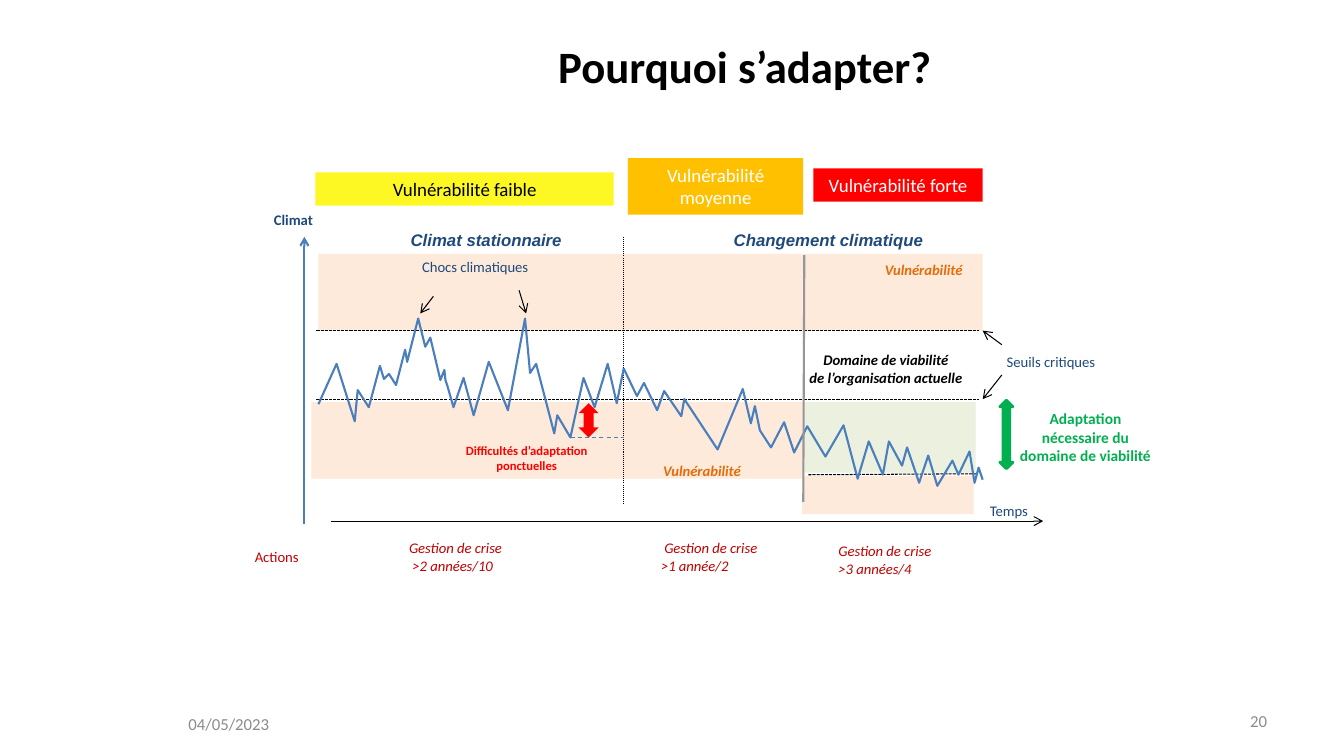
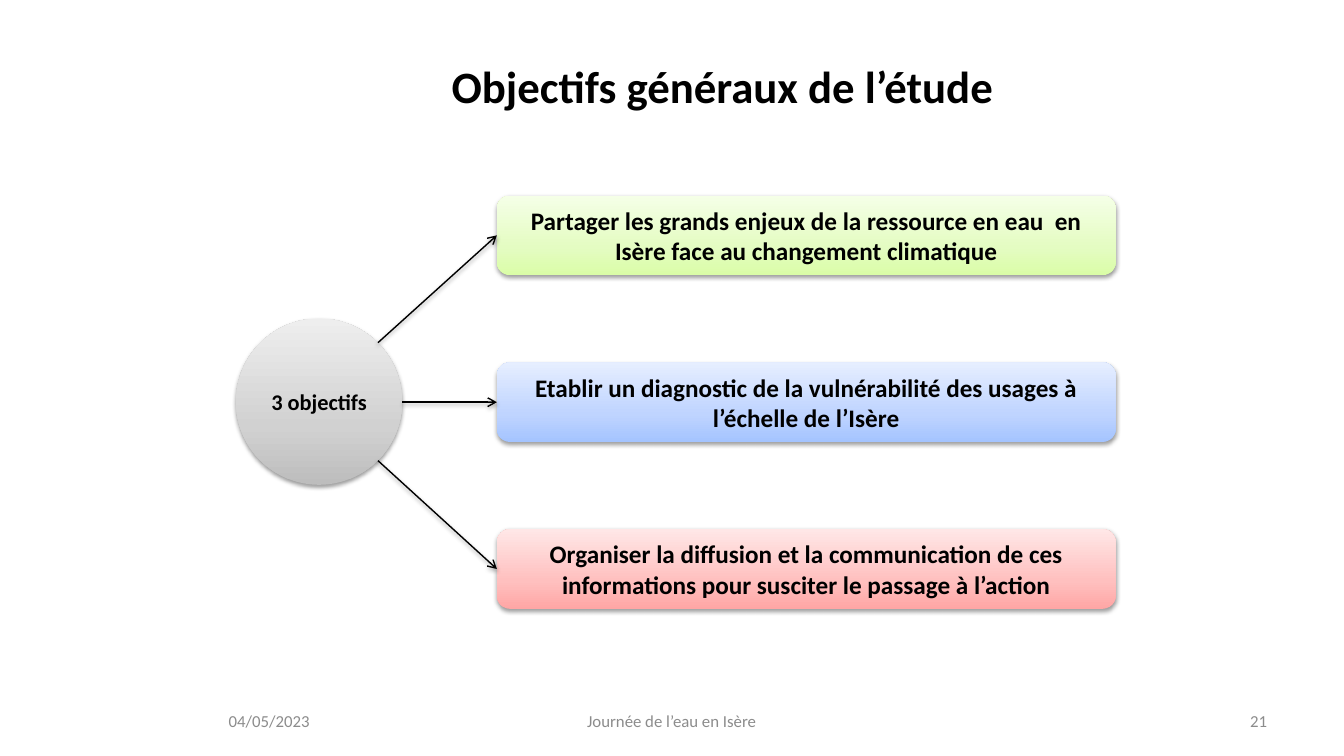
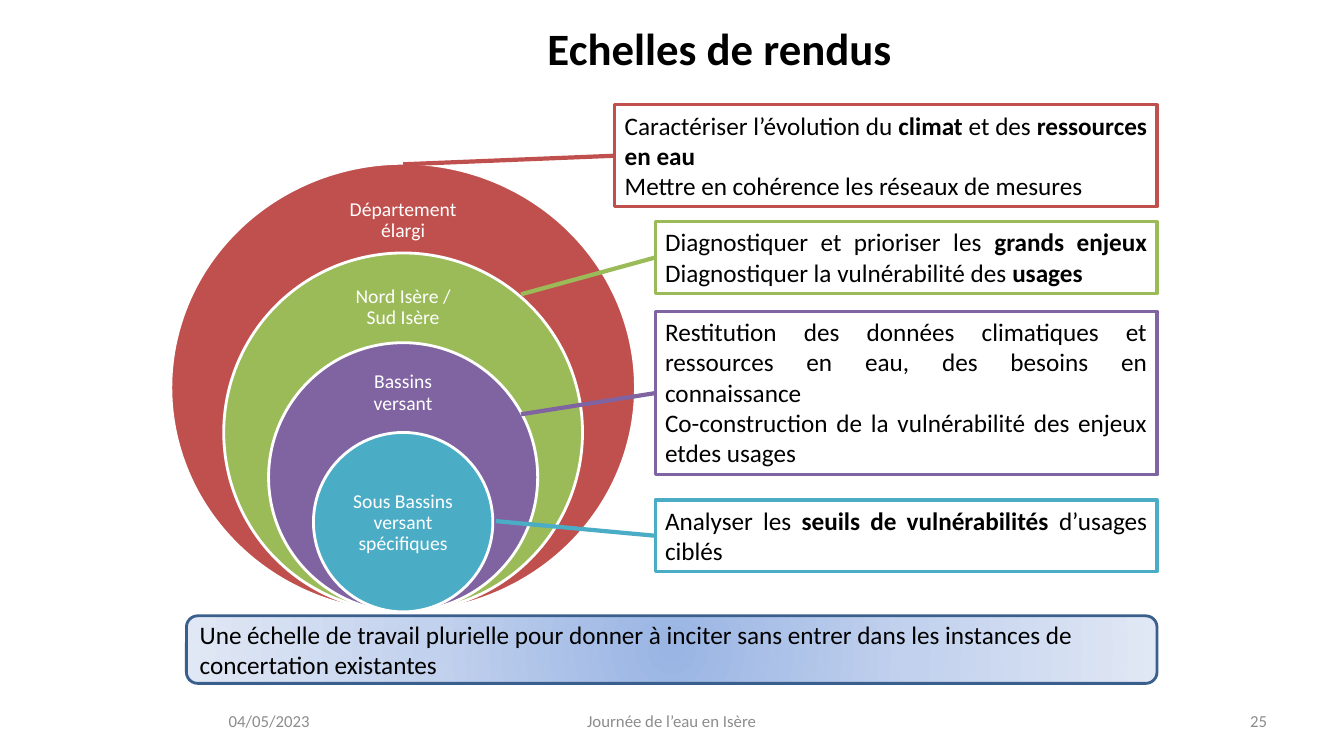
import pptx
import pptx.dml.color
import pptx.enum.dml
import pptx.enum.shapes
import pptx.enum.text
import pptx.oxml
import pptx.oxml.ns
import pptx.util

SHAPE = pptx.enum.shapes.MSO_SHAPE
DASH = pptx.enum.dml.MSO_LINE
ALIGN = pptx.enum.text.PP_ALIGN
ANCHOR = pptx.enum.text.MSO_ANCHOR

BLACK, WHITE, NAVY, GREY = "000000", "FFFFFF", "1F497D", "8C8C8C"
RED, GREEN, DARK_RED, ORANGE = "FF0000", "00B050", "C00000", "E46C0A"
CURVE_BLUE, PEACH = "4B7EBC", "FDEADA"
DATE, EVENT = "04/05/2023", "Journée de l’eau en Isère"

# Curve points in hundredths of an inch
STATIONARY_CURVE = [
    (316, 401), (334, 361), (352, 418), (355, 387), (366, 404), (377, 363),
    (381, 376), (386, 371), (393, 382), (402, 347), (404, 359), (415, 316),
    (422, 344), (427, 335), (437, 377), (441, 367), (442, 377), (444, 383),
    (450, 404), (460, 375), (470, 412), (485, 359), (504, 407), (521, 316),
    (526, 370), (532, 361), (550, 430), (553, 412), (566, 434), (579, 375),
    (590, 404), (603, 361), (612, 400), (619, 365)]
CHANGING_CURVE = [
    (619, 366), (632, 393), (639, 380), (652, 407), (659, 388), (676, 413),
    (679, 396), (712, 446), (737, 386), (745, 420), (749, 403), (754, 427),
    (765, 444), (778, 419), (788, 449), (801, 423), (819, 453), (837, 422),
    (851, 475), (862, 438), (876, 471), (882, 438), (895, 462), (900, 444),
    (912, 479), (921, 452), (930, 482), (945, 457), (951, 471), (962, 448),
    (967, 479), (971, 464), (975, 476)]


def inches(*values):
    return [pptx.util.Cm(value * 2.54) for value in values]


def colour(hex_code):
    return pptx.dml.color.RGBColor.from_string(hex_code)


def look(size, hex_code, **extra):
    """Font colour and the dict of the other font attributes."""
    return hex_code, {"name": "Calibri", "size": pptx.util.Pt(size),
                      "bold": False, **extra}


def write(frame, paragraphs, style, align=ALIGN.LEFT, anchor=ANCHOR.TOP,
          spacing=None, **margins):
    """A paragraph is a string, or runs of which every second one is bold."""
    hex_code, attributes = style
    for name, value in {"word_wrap": True, "vertical_anchor": anchor, **margins}.items():
        setattr(frame, name, value)
    if isinstance(paragraphs, str):
        paragraphs = [paragraphs]
    for number, runs in enumerate(paragraphs):
        paragraph = frame.add_paragraph() if number else frame.paragraphs[0]
        paragraph.alignment = align
        paragraph.line_spacing = spacing
        for index, text in enumerate([runs] if isinstance(runs, str) else runs):
            run = paragraph.add_run()
            run.text = text
            for name, value in attributes.items():
                setattr(run.font, name, value)
            run.font.color.rgb = colour(hex_code)
            if index % 2:
                run.font.bold = True


def add_text(slide, box, paragraphs, style, **layout):
    write(slide.shapes.add_textbox(*inches(*box)).text_frame, paragraphs, style, **layout)


def set_line(line, hex_code, width, dash=None):
    line.color.rgb = colour(hex_code)
    line.width = pptx.util.Pt(width)
    if dash:
        line.dash_style = dash


def add_shape(slide, kind, box, fill=None, outline=None):
    shape = slide.shapes.add_shape(kind, *inches(*box))
    shape.shadow.inherit = False
    if fill:
        shape.fill.solid()
        shape.fill.fore_color.rgb = colour(fill)
    else:
        shape.fill.background()
    if outline:
        set_line(shape.line, *outline)
    else:
        shape.line.fill.background()
    return shape


def add_line(slide, start, end, hex_code=BLACK, width=0.75, dash=None, arrow=False):
    connector = slide.shapes.add_connector(
        pptx.enum.shapes.MSO_CONNECTOR.STRAIGHT, *inches(*start, *end))
    set_line(connector.line, hex_code, width, dash)
    properties = connector.element.spPr
    if arrow:
        line = properties.find(pptx.oxml.ns.qn("a:ln"))
        line.append(make_xml("tailEnd", 'type="arrow"'))
    properties.append(make_xml("effectLst"))
    return connector


def add_curve(slide, points):
    builder = slide.shapes.build_freeform(*points[0], scale=pptx.util.Cm(0.0254))
    builder.add_line_segments(points[1:], close=False)
    curve = builder.convert_to_shape()
    curve.shadow.inherit = False
    curve.fill.background()
    set_line(curve.line, CURVE_BLUE, 1.5)


def make_xml(tag, attributes="", content=""):
    namespace = pptx.oxml.ns.nsdecls("a")
    return pptx.oxml.parse_xml(f"<a:{tag} {namespace} {attributes}>{content}</a:{tag}>")


def add_shadow(shape):
    effects = shape.element.spPr.find(pptx.oxml.ns.qn("a:effectLst"))
    effects.append(make_xml(
        "outerShdw", 'blurRad="40000" dist="20000" dir="5400000" rotWithShape="0"',
        '<a:srgbClr val="000000"><a:alpha val="38000"/></a:srgbClr>'))


def set_gradient(shape, stops, direction='<a:lin ang="16200000" scaled="0"/>'):
    shape.fill.gradient()
    properties = shape.element.spPr
    colours = "".join(f'<a:gs pos="{position * 1000}"><a:srgbClr val="{hex_code}"/></a:gs>'
                      for position, hex_code in stops)
    properties.replace(
        properties.find(pptx.oxml.ns.qn("a:gradFill")),
        make_xml("gradFill", 'rotWithShape="1"', f"<a:gsLst>{colours}</a:gsLst>{direction}"))


def add_slide(presentation, title, title_box, number, date_at=(2.17, 6.95), event=EVENT):
    """Blank slide with the shared title and footer."""
    slide = presentation.slides.add_slide(presentation.slide_layouts[6])
    add_text(slide, title_box, title, look(32, BLACK, bold=True),
             align=ALIGN.CENTER, anchor=ANCHOR.MIDDLE)
    footers = [((*date_at, 2.33, 0.4), DATE, ALIGN.LEFT),
               ((9.56, 6.95, 3.11, 0.4), number, ALIGN.RIGHT)]
    if event:
        footers.append(((5.08, 6.95, 3.17, 0.4), event, ALIGN.CENTER))
    for box, text, align in footers:
        add_text(slide, box, text, look(12, GREY), align=align, anchor=ANCHOR.MIDDLE)
    return slide


def draw_climate_graph(slide):
    for box, fill in [((7.98, 3.99, 1.7, 0.7), "EBF1DE"),
                      ((7.96, 4.72, 1.7, 0.38), PEACH),
                      ((3.09, 3.99, 4.88, 0.76), PEACH),
                      ((3.16, 2.52, 6.59, 0.76), PEACH)]:
        add_shape(slide, SHAPE.RECTANGLE, box, fill)

    for threshold in (3.28, 3.96):
        add_line(slide, (3.14, threshold), (9.71, threshold), dash=DASH.SQUARE_DOT)
    add_line(slide, (8.02, 4.71), (9.7, 4.7), dash=DASH.SQUARE_DOT)
    add_line(slide, (6.19, 2.35), (6.19, 5), dash=DASH.ROUND_DOT)
    add_line(slide, (5.66, 4.34), (6.19, 4.34), CURVE_BLUE, dash=DASH.DASH)
    for curve in (STATIONARY_CURVE, CHANGING_CURVE):
        add_curve(slide, curve)
    for start, end in [((9.94, 3.42), (9.75, 3.28)), ((9.94, 3.72), (9.75, 3.96)),
                       ((5.15, 2.88), (5.22, 3.11)), ((4.3, 2.94), (4.17, 3.11)),
                       ((3.28, 5.17), (10.35, 5.17))]:
        add_line(slide, start, end, arrow=True)
    add_line(slide, (3.02, 5.2), (3.02, 2.35), CURVE_BLUE, 1.5, arrow=True)
    add_shape(slide, SHAPE.UP_DOWN_ARROW, (5.74, 4, 0.2, 0.34), RED)
    add_shape(slide, SHAPE.UP_DOWN_ARROW, (9.92, 3.97, 0.13, 0.68), GREEN, (GREEN, 2))
    add_line(slide, (7.98, 2.53), (7.97, 4.98), "969696", 1.5)


def label_climate_graph(slide):
    plain = look(10.5, NAVY)
    period = look(12, NAVY, name="Arial", bold=True, italic=True)
    vulnerable = look(10.5, ORANGE, bold=True, italic=True)
    crisis = look(10.5, DARK_RED, italic=True)
    for box, text, style in [
            ((3.56, 2.23, 2.53, 0.33), "Climat stationnaire", period),
            ((6.72, 2.23, 3, 0.3), "Changement climatique", period),
            ((3.79, 2.51, 1.85, 0.28), "Chocs climatiques", plain),
            ((9.36, 4.93, 1.3, 0.28), "Temps", plain),
            ((8.42, 2.54, 1.49, 0.28), "Vulnérabilité", vulnerable),
            ((6.19, 4.53, 1.55, 0.28), "Vulnérabilité", vulnerable),
            ((7.01, 3.43, 3.56, 0.45),
             ["Domaine de viabilité", "de l’organisation actuelle"],
             look(10.5, BLACK, bold=True, italic=True)),
            ((4.12, 4.34, 2.21, 0.4), ["Difficultés d’adaptation", "ponctuelles"],
             look(9, RED, bold=True)),
            ((10.01, 4.01, 1.52, 0.66), "Adaptation nécessaire du domaine de viabilité",
             look(11, GREEN, bold=True))]:
        add_text(slide, box, text, style, align=ALIGN.CENTER)

    for box, text, style in [
            ((9.89, 3.45, 1.2, 0.28), "Seuils critiques", plain),
            ((2.62, 2.04, 0.8, 0.28), "Climat", look(10.5, NAVY, bold=True)),
            ((2.43, 5.39, 0.8, 0.28), "Actions", look(10.5, DARK_RED)),
            ((3.96, 5.3, 1.91, 0.45), ["Gestion de crise", " >2 années/10"], crisis),
            ((6.46, 5.3, 1.75, 0.45), [" Gestion de crise", ">1 année/2"], crisis),
            ((8.22, 5.33, 2.26, 0.45), ["Gestion de crise", ">3 années/4"], crisis)]:
        add_text(slide, box, text, style)

    for box, level, fill, ink in [((3.13, 1.71, 2.96, 0.33), "faible", "FDF824", BLACK),
                                  ((6.23, 1.57, 1.74, 0.56), "moyenne", "FFC000", WHITE),
                                  ((8.07, 1.67, 1.68, 0.33), "forte", RED, WHITE)]:
        header = add_shape(slide, SHAPE.RECTANGLE, box, fill)
        write(header.text_frame, f"Vulnérabilité {level}", look(13.5, ink),
              align=ALIGN.CENTER)


def add_objective(slide, kind, box, text, size, tints):
    shape = add_shape(slide, kind, box)
    set_gradient(shape, zip((0, 35, 100), tints))
    add_shadow(shape)
    write(shape.text_frame, text, look(size, BLACK, bold=True),
          align=ALIGN.CENTER, anchor=ANCHOR.MIDDLE)


def draw_objectives(slide):
    objectives = [
        ("Partager les grands enjeux de la ressource en eau  en Isère face au "
         "changement climatique", ("DAFDA7", "E4FCC2", "F5FFE7"), (3.75, 3.4)),
        ("Etablir un diagnostic de la vulnérabilité des usages à l’échelle de l’Isère",
         ("A4C4FF", "BFD4FF", "E6EEFF"), (3.99, 3.99)),
        ("Organiser la diffusion et la communication de ces informations pour susciter "
         "le passage à l’action", ("FFA6A5", "FFC0BF", "FFE7E7"), (3.75, 4.57))]
    left, height, middle, pitch = 4.93, 0.79, 3.99, 1.655
    add_objective(slide, SHAPE.OVAL, (2.34, 3.16, 1.65, 1.65), "3 objectifs", 16,
                  ("BDBDBD", "D1D1D1", "EEEEEE"))
    for row, (text, tints, start) in enumerate(objectives):
        centre = middle + (row - 1) * pitch
        add_objective(slide, SHAPE.ROUNDED_RECTANGLE,
                      (left, centre - height / 2, 6.14, height), text, 18, tints)
        add_shadow(add_line(slide, start, (left, centre), width=1, arrow=True))


def draw_scales(slide):
    banner = add_shape(slide, SHAPE.ROUNDED_RECTANGLE, (1.85, 6.11, 9.63, 0.67),
                       outline=("3A5F8C", 2))
    set_gradient(banner, [(0, "9AB5E4"), (50, "C2D1ED"), (100, "E1E8F5")],
                 '<a:path path="circle"><a:fillToRect l="50000" t="50000" r="50000" '
                 'b="50000"/></a:path>')
    write(banner.text_frame,
          "Une échelle de travail plurielle pour donner à inciter sans entrer dans les "
          "instances de concertation existantes", look(18, BLACK), anchor=ANCHOR.MIDDLE)

    centre, bottom, step, label_width = 4, 6.07, 0.89, 1.3
    margin = inches(0.11)[0]
    margins = {f"margin_{side}": margin for side in ("left", "top", "right", "bottom")}
    scales = [("Département élargi", "C0504D", 4.61, 2.19),
              ("Nord Isère / Sud Isère", "9BBB59", 3.56, 3.05),
              ("Bassins versant", "8064A2", 2.67, 3.9),
              ("Sous Bassins versant spécifiques", "4BACC6", 1.78, 5.19)]
    for index, (text, fill, width, label_centre) in enumerate(scales):
        height = (5 - index) * step
        add_shape(slide, SHAPE.OVAL, (centre - width / 2, bottom - height, width, height),
                  fill, (WHITE, 2))
        add_text(slide, (centre - label_width / 2, label_centre - 0.45, label_width, 0.9),
                 text, look(14, WHITE), align=ALIGN.CENTER, anchor=ANCHOR.MIDDLE,
                 spacing=0.9, **margins)

    right = 11.48
    callouts = [
        (6.1, 1.04, 1.01, (4, 1.63),
         [("Caractériser l’évolution du ", "climat", " et des ", "ressources en eau"),
          "Mettre en cohérence les réseaux de mesures"]),
        (6.5, 2.2, 0.71, (5.17, 2.92),
         [("Diagnostiquer et prioriser les ", "grands enjeux ",
           "Diagnostiquer la vulnérabilité des ", "usages")]),
        (6.5, 3.09, 1.62, (5.17, 4.11),
         ["Restitution des données climatiques et ressources en eau, des besoins en "
          "connaissance",
          "Co-construction de la vulnérabilité des enjeux etdes usages"]),
        (6.5, 4.96, 0.71, (4.92, 5.17),
         [("Analyser les ", "seuils de vulnérabilités ", "d’usages ciblés")])]
    for (_, hex_code, _, _), (left, top, height, target, text) in zip(scales, callouts):
        callout = add_shape(slide, SHAPE.RECTANGLE, (left, top, right - left, height),
                            outline=(hex_code, 2.25))
        write(callout.text_frame, text, look(18, BLACK), align=ALIGN.JUSTIFY)
        add_line(slide, (left, top + height / 2), target, hex_code, 3)


def main():
    presentation = pptx.Presentation()
    presentation.slide_width = pptx.util.Cm(33.87)
    presentation.slide_height = pptx.util.Cm(19.05)

    adaptation = add_slide(presentation, "Pourquoi s’adapter?", (3.12, 0.21, 8.54, 0.89),
                           "20", date_at=(1.77, 6.98), event=None)
    draw_climate_graph(adaptation)
    label_climate_graph(adaptation)
    draw_objectives(add_slide(presentation, "Objectifs généraux de l’étude",
                              (3.15, 0.22, 8.04, 1.25), "21"))
    draw_scales(add_slide(presentation, "Echelles de rendus",
                          (3.12, 0.21, 8.04, 0.52), "25"))
    presentation.save("out.pptx")


if __name__ == "__main__":
    main()
